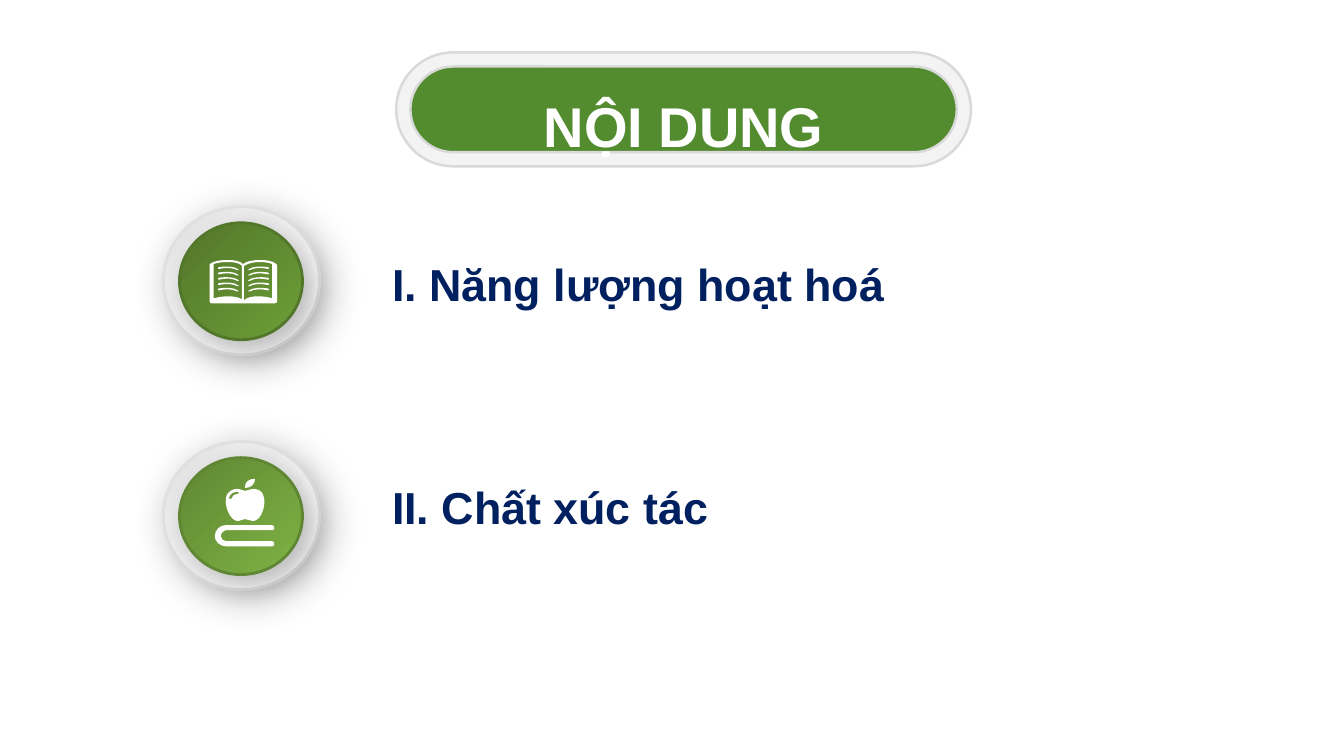
"""Builds the contents slide: a title pill and two icon rows."""
from lxml import etree
from pptx import Presentation, util as u
from pptx.dml.color import RGBColor
from pptx.enum import shapes as sh, text as tx
from pptx.oxml.ns import qn

WIDE, HIGH = 13.33, 7.5
FONT = "Arial"
TITLE = "NỘI DUNG"
PILLS = [((3.93, 0.52, 5.7, 1.13), "F3F3F3"), ((4.07, 0.66, 5.42, 0.85), "538C2E")]
RIM = [(0, "FFFFFF"), (73, "ECECEC"), (100, "D9D9D9")]

COVER = [(66, 4), (63, 1, 57, 0, 50, 0), (43, 0, 37, 1, 33, 4), (30, 1, 25, 0, 18, 0),
         (10, 0, 4, 1, 0, 4), (0, 41), (0, 42, 1, 43, 2, 43), (64, 43),
         (65, 43, 67, 43, 67, 41), (67, 5)]
LEFT = [(32, 6), (32, 39), (29, 37, 24, 36, 18, 36), (13, 36, 8, 37, 4, 38), (4, 4),
        (4, 4, 9, 2, 18, 2), (28, 2, 32, 5, 32, 6)]
RIGHT = [(62, 4), (62, 38), (59, 37, 53, 36, 49, 36), (42, 36, 37, 37, 34, 40), (34, 6),
         (34, 6, 39, 2, 50, 2), (58, 2, 62, 4, 62, 4)]
ROW = [(28, 10), (27, 10), (24, 8, 17, 7, 9, 9), (9, 9, 8, 9, 8, 8), (8, 8, 8, 8, 9, 7),
       (16, 6, 24, 6, 28, 9), (29, 9, 29, 9, 29, 10)]
SPINE = [(59, 65), (59, 66, 58, 67, 57, 67), (11, 67), (5, 67, 0, 62, 0, 57),
         (0, 51, 5, 46, 11, 46), (57, 46), (58, 46, 59, 47, 59, 49),
         (59, 50, 58, 51, 57, 51), (12, 51), (9, 51, 6, 54, 6, 57),
         (6, 60, 9, 62, 12, 62), (57, 62), (58, 62, 59, 63, 59, 65)]
LEAF = [(31, 9), (36, 9, 40, 5, 40, 0), (34, 0, 30, 3, 30, 8), (30, 9)]
APPLE = [(48, 16), (47, 12, 42, 10, 38, 10), (34, 10, 34, 12, 30, 12),
         (27, 12, 26, 10, 22, 10), (19, 10, 14, 12, 12, 16), (8, 25, 15, 42, 23, 42),
         (26, 42, 27, 40, 30, 40), (33, 40, 35, 42, 38, 42), (46, 42, 52, 25, 48, 16)]
SHINE = [(23, 15), (22, 15), (20, 15, 17, 17, 17, 19), (17, 20, 16, 20, 16, 20), (15, 20),
         (15, 20, 14, 20, 14, 19), (15, 15, 19, 13, 22, 13), (23, 13),
         (23, 13, 24, 13, 24, 14), (24, 15, 23, 15, 23, 15)]


def shift(curve, down, flip):
    """Moves a book line down and mirrors it for the right page."""
    return [tuple(v + down if i % 2 else (67 - v if flip else v)
                  for i, v in enumerate(step)) for step in curve]


BOOK = [[COVER, LEFT, RIGHT]] + [[shift(ROW, 5.3 * n, flip)]
                                 for flip in (False, True) for n in range(5)]
FRUIT = [[SPINE, LEAF, APPLE, SHINE]]
ITEMS = [("I. Năng lượng hoạt hoá", (3.79, 2.5, 5.25, 0.64), False,
          "6D9E38", "52762A", BOOK, (2.08, 2.58)),
         ("II. Chất xúc tác", (3.79, 4.71, 9.11, 0.64), True,
          "7FB344", "5F8633", FRUIT, (2.13, 4.75))]


def ink(code):
    """Turns a hex string into a colour."""
    return RGBColor.from_string(code)


def inch(box):
    """Turns a tuple of inches into lengths."""
    return [u.Inches(v) for v in box]


def paint(shape, fill, line=None, width=0):
    """Sets a flat fill and an outline."""
    shape.shadow.inherit = False
    shape.fill.solid()
    shape.fill.fore_color.rgb = ink(fill)
    if line:
        shape.line.color.rgb = ink(line)
        shape.line.width = u.Pt(width)
    else:
        shape.line.fill.background()


def node(home, tag, **attrs):
    """Adds one drawing element."""
    return etree.SubElement(home, qn("a:" + tag), {k: str(v) for k, v in attrs.items()})


def disc(group, box, stops, line, shade):
    """Draws a shaded circle with a soft shadow."""
    shape = group.shapes.add_shape(sh.MSO_SHAPE.OVAL, *inch(box))
    shape.rotation = 180
    paint(shape, "FFFFFF", line, 2)
    shape.fill.gradient()
    shape.fill.gradient_angle = 315
    props = shape.element.spPr
    bands = props.find(".//" + qn("a:gsLst"))
    for old in list(bands):
        bands.remove(old)
    for spot, code in stops:
        node(node(bands, "gs", pos=spot * 1000), "srgbClr", val=code)
    alpha, blur, dist = shade
    cast = node(props.find(qn("a:effectLst")), "outerShdw", blurRad=u.Pt(blur),
                dist=u.Pt(dist), dir=45 * 60000, algn="tl", rotWithShape=0)
    node(node(cast, "srgbClr", val="000000"), "alpha", val=alpha * 1000)


def bend(shape, steps, left, top):
    """Turns the straight parts that have handles into curves."""
    lines = list(shape.element.spPr.iter(qn("a:lnTo")))
    for line, step in zip(lines, steps):
        if len(step) == 6:
            curve = node(line.getparent(), "cubicBezTo")
            for x, y in zip(step[::2], step[1::2]):
                node(curve, "pt", x=round((x - left) * 100), y=round((y - top) * 100))
            line.getparent().replace(line, curve)


def draw(group, curves, spot):
    """Draws one white outline with its holes."""
    pen = None
    for curve in curves:
        first, *rest = [(step[-2] * 100, step[-1] * 100) for step in curve]
        if pen is None:
            pen = group.shapes.build_freeform(*first, scale=91.44)
        else:
            pen.move_to(*first)
        pen.add_line_segments(rest, close=True)
    shape = pen.convert_to_shape(*inch(spot))
    paint(shape, "FFFFFF")
    ends = [step[-2:] for curve in curves for step in curve]
    left, top = (min(side) for side in zip(*ends))
    bend(shape, [step for curve in curves for step in curve[1:]], left, top)


def write(shape, words, size, code, align):
    """Sets the text of a box and its style."""
    frame = shape.text_frame
    frame.text = words
    frame.vertical_anchor = tx.MSO_ANCHOR.TOP
    para = frame.paragraphs[0]
    para.alignment = align
    font = para.font
    font.name, font.size, font.bold = FONT, u.Pt(size), True
    font.color.rgb = ink(code)
    return frame


def main():
    """Builds and saves the slide."""
    deck = Presentation()
    deck.slide_width, deck.slide_height = inch((WIDE, HIGH))
    slide = deck.slides.add_slide(deck.slide_layouts[5])
    board = slide.shapes
    title = board.title

    group = board.add_group_shape()
    for box, fill in PILLS:
        pill = group.shapes.add_shape(sh.MSO_SHAPE.ROUNDED_RECTANGLE, *inch(box))
        pill.adjustments[0] = 0.5
        paint(pill, fill, "D9D9D9", 1.75)

    title.left, title.top, title.width, title.height = inch((4.59, 0.52, 4.38, 0.75))
    frame = write(title, TITLE, 40, "FFFFFF", tx.PP_ALIGN.CENTER)
    frame.auto_size = tx.MSO_AUTO_SIZE.NONE
    frame.word_wrap = True
    frame.paragraphs[0].line_spacing = 1.5
    board.element.append(title.element)

    for n, (words, box, wrap, light, dark, icon, spot) in enumerate(ITEMS):
        top = 2.05 + 2.33 * n
        group = board.add_group_shape()
        disc(group, (1.62, top, 1.55, 1.47), RIM, "E0E0E0", (28, 28, 7))
        disc(group, (1.78, top + 0.16, 1.22, 1.16), [(0, light), (100, dark)],
             dark, (25, 20, 9))
        for curves in icon:
            draw(group, curves, spot)
        label = board.add_textbox(*inch(box))
        frame = write(label, words, 32, "002060", tx.PP_ALIGN.JUSTIFY)
        frame.word_wrap = wrap
        frame.auto_size = tx.MSO_AUTO_SIZE.SHAPE_TO_FIT_TEXT

    deck.save("out.pptx")


if __name__ == "__main__":
    main()
